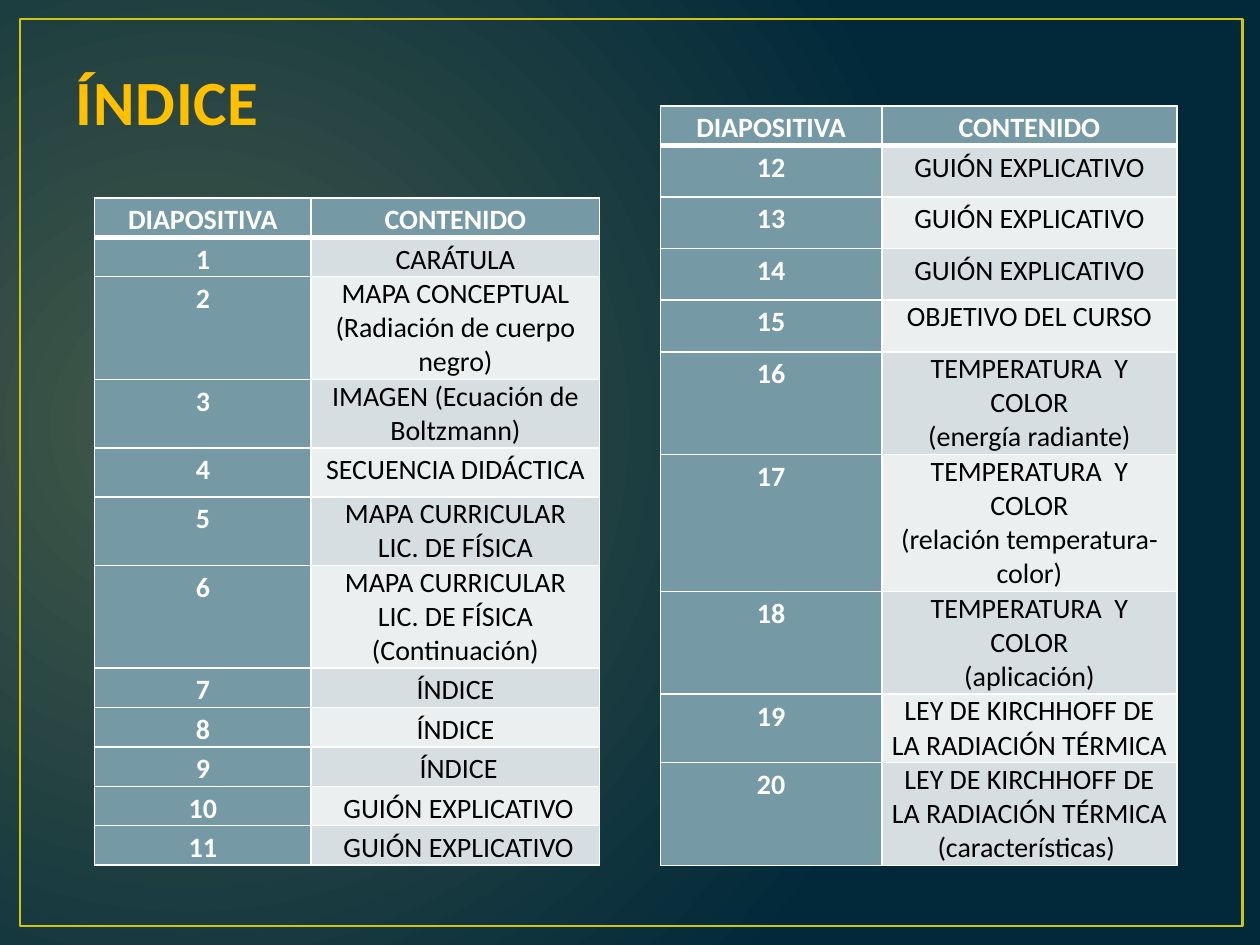
from lxml import etree
from pptx import Presentation
from pptx.dml.color import RGBColor
from pptx.enum import shapes, text
from pptx.oxml import ns
from pptx.util import Inches, Pt

TEAL, WHITE, BLACK = "759AA5", "FFFFFF", "000000"
BANDS = ("D6DEE1", "ECEFF0")
HEAD = ("DIAPOSITIVA", "CONTENIDO")
WIDE, TIGHT = 1.15, 1.0

# Each row: height, content, line spacing of the content
LEFT = [
    (0.3, "CARÁTULA", WIDE),
    (0.3, "MAPA CONCEPTUAL (Radiación de cuerpo negro)", TIGHT),
    (0.5, "IMAGEN (Ecuación de Boltzmann)", TIGHT),
    (0.39, "SECUENCIA DIDÁCTICA", WIDE),
    (0.51, "MAPA CURRICULAR\nLIC. DE FÍSICA", TIGHT),
    (0.77, "MAPA CURRICULAR\nLIC. DE FÍSICA\n(Continuación)", TIGHT),
    (0.3, "ÍNDICE", WIDE),
    (0.21, "ÍNDICE", WIDE),
    (0.3, " ÍNDICE", WIDE),
    (0.3, " GUIÓN EXPLICATIVO", WIDE),
    (0.3, " GUIÓN EXPLICATIVO", WIDE),
]
RIGHT = [
    (0.41, "GUIÓN EXPLICATIVO", WIDE),
    (0.41, "GUIÓN EXPLICATIVO", WIDE),
    (0.41, "GUIÓN EXPLICATIVO", WIDE),
    (0.41, "OBJETIVO DEL CURSO", TIGHT),
    (0.4, "TEMPERATURA  Y COLOR\n(energía radiante)", TIGHT),
    (0.6, "TEMPERATURA  Y COLOR\n(relación temperatura-color)", TIGHT),
    (0.52, "TEMPERATURA  Y COLOR\n(aplicación)", TIGHT),
    (0.52, "LEY DE KIRCHHOFF DE LA RADIACIÓN TÉRMICA", TIGHT),
    (0.32, "LEY DE KIRCHHOFF DE LA RADIACIÓN TÉRMICA\n(características) ", TIGHT),
]


def rgb(code):
    return RGBColor.from_string(code)


def write(frame, words, size=16, color=BLACK, bold=False, align="CENTER", space=TIGHT):
    frame.text = words
    for par in frame.paragraphs:
        par.alignment = getattr(text.PP_ALIGN, align)
        par.line_spacing = space
        font = par.runs[0].font
        font.name, font.size, font.bold = "Calibri", Pt(size), bold
        font.color.rgb = rgb(color)


def line_xml(tag, color, width):
    line = etree.Element(ns.qn(tag), w=str(Pt(width)))
    fill = etree.SubElement(line, ns.qn("a:solidFill"))
    etree.SubElement(fill, ns.qn("a:srgbClr"), val=color)
    return line


def backdrop(slide):
    fill = slide.background.fill
    fill.gradient()
    for stop, color in zip(fill.gradient_stops, ("445A49", "01293A")):
        stop.color.rgb = rgb(color)
    # Turn the linear gradient into a radial one
    grad = slide.element.find(".//" + ns.qn("a:gradFill"))
    grad.remove(grad.find(ns.qn("a:lin")))
    way = etree.SubElement(grad, ns.qn("a:path"), path="circle")
    etree.SubElement(way, ns.qn("a:fillToRect"),
                     l="15000", t="50000", r="85000", b="60000")


def border(slide):
    box = slide.shapes.add_shape(shapes.MSO_SHAPE.RECTANGLE, Inches(0.16),
                                 Inches(0.15), Inches(9.7), Inches(7.2))
    box.shadow.inherit = False
    box.fill.background()
    box.line.color.rgb = rgb("CFC60D")
    box.line.width = Pt(1.5)


def heading(slide):
    title = slide.shapes.title
    title.left, title.top = Inches(0.5), Inches(0.3)
    title.width, title.height = Inches(1.98), Inches(0.85)
    frame = title.text_frame
    write(frame, "ÍNDICE", size=36, color="FFC000", bold=True, align="LEFT")
    frame.vertical_anchor = text.MSO_ANCHOR.BOTTOM
    frame.word_wrap = False
    props = frame.paragraphs[0].runs[0].font._element
    props.set("spc", "50")
    props.insert(0, line_xml("a:ln", "384F55", 1.05))


def fill_cell(cell, words, back, under=1, **form):
    cell.margin_left = cell.margin_right = Inches(0.07)
    cell.margin_top = cell.margin_bottom = 0
    write(cell.text_frame, words, **form)
    cell.fill.solid()
    cell.fill.fore_color.rgb = rgb(back)
    props = cell._tc.get_or_add_tcPr()
    for spot, side in enumerate("LRTB"):
        width = under if side == "B" else 1
        props.insert(spot, line_xml("a:ln" + side, WHITE, width))


def index(slide, left, top, cols, first, rows, head):
    high = head + sum(row[0] for row in rows)
    table = slide.shapes.add_table(len(rows) + 1, 2, Inches(left), Inches(top),
                                   Inches(sum(cols)), Inches(high)).table
    for col, width in zip(table.columns, cols):
        col.width = Inches(width)
    strong = dict(color=WHITE, bold=True, space=WIDE)
    table.rows[0].height = Inches(head)
    for col, words in enumerate(HEAD):
        fill_cell(table.cell(0, col), words, TEAL, under=3, **strong)
    for num, (height, words, space) in enumerate(rows):
        table.rows[num + 1].height = Inches(height)
        fill_cell(table.cell(num + 1, 0), str(first + num), TEAL, **strong)
        fill_cell(table.cell(num + 1, 1), words, BANDS[num % 2], space=space)


def main():
    deck = Presentation()
    deck.slide_width, deck.slide_height = Inches(10), Inches(7.5)
    slide = deck.slides.add_slide(deck.slide_layouts[5])
    backdrop(slide)
    border(slide)
    heading(slide)
    index(slide, 0.75, 1.57, (1.72, 2.29), 1, LEFT, 0.3)
    index(slide, 5.24, 0.84, (1.76, 2.34), 12, RIGHT, 0.31)
    deck.save("out.pptx")


if __name__ == "__main__":
    main()
